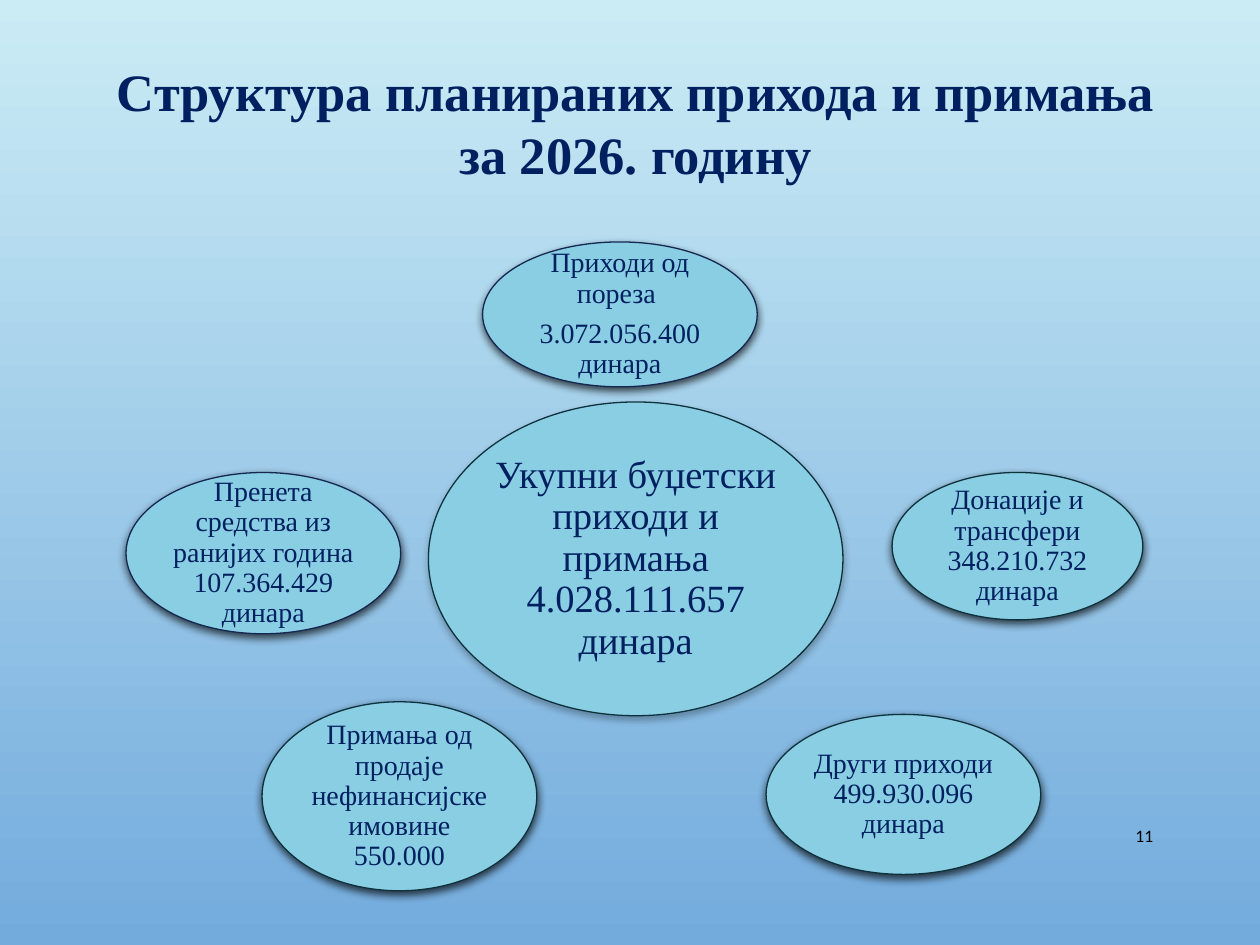
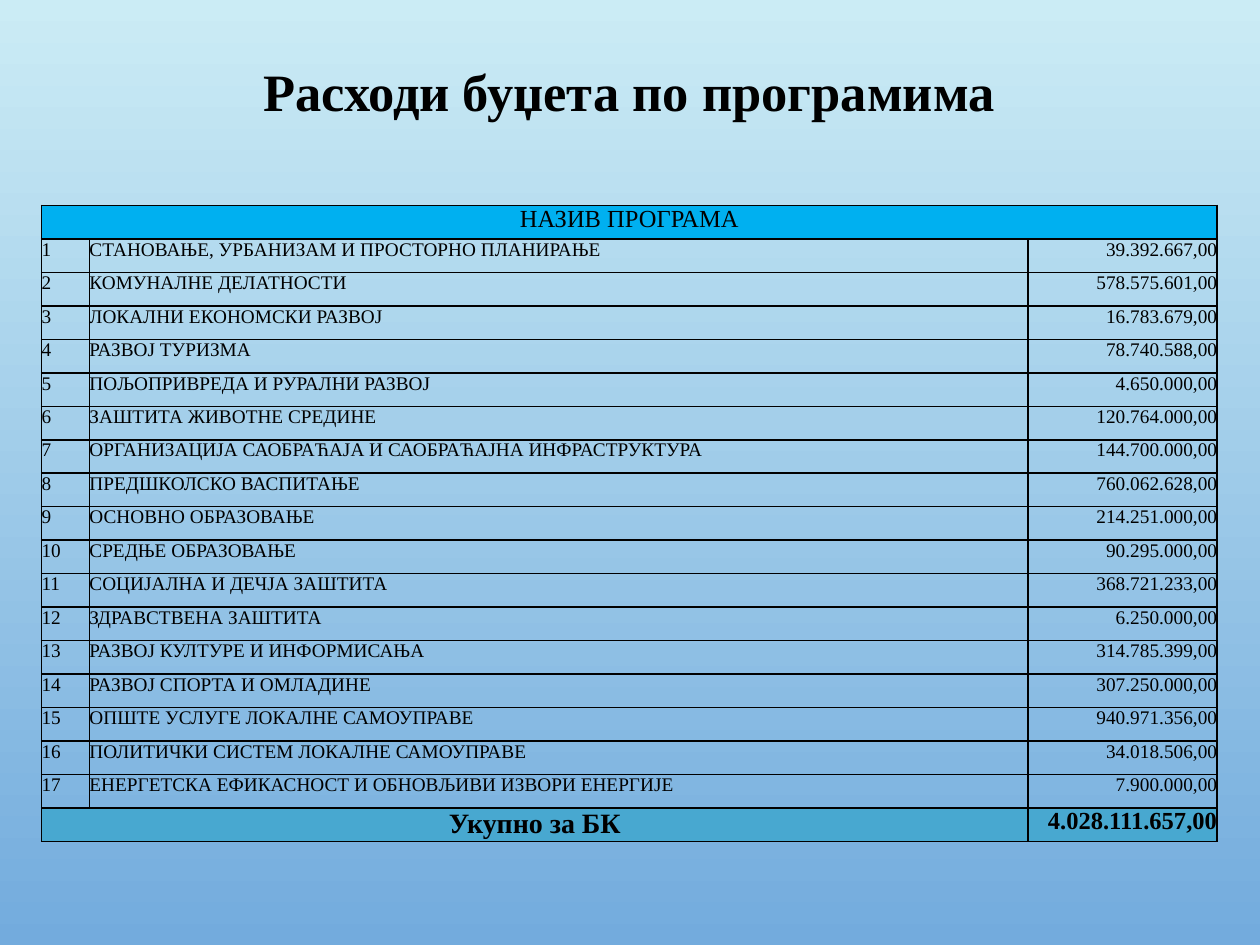
from typing import NamedTuple

from lxml import etree
from pptx import Presentation
from pptx.dml.color import RGBColor
from pptx.enum.shapes import MSO_SHAPE as SHAPE
from pptx.enum.text import MSO_ANCHOR as ANCHOR, PP_ALIGN as ALIGN
from pptx.oxml.ns import qn
from pptx.util import Emu, Pt

EMU_PER_PX = 9144  # 100 px to the inch
SERIF, SANS = "Times New Roman", "Calibri"
NAVY, BLACK = "002060", "000000"
SKY_TOP, SKY_BOTTOM = "CBECF5", "73ABDD"
BUBBLE, TEAL_LINE, BLUE_LINE = "8ACEE4", "0E323D", "142852"
HEADER_FILL, TOTAL_FILL = "00B0F0", "48A8D0"
PLAIN_TABLE_STYLE = "{2D5ABB26-0587-4C30-8999-92F81FD0307C}"


class Box(NamedTuple):
    left: int
    top: int
    width: int
    height: int


class Bubble(NamedTuple):
    box: Box
    lines: tuple[str, ...]
    line: str = TEAL_LINE
    size: int = 16
    inset: int = 2
    shadow_alpha: int = 69
    shadow_blur: int = 5


class Program(NamedTuple):
    name: str
    amount: str


BUBBLES = [
    Bubble(Box(340, 319, 329, 249), ("Укупни буџетски приходи и примања 4.028.111.657 динара",),
           size=22, inset=3, shadow_alpha=28, shadow_blur=4),
    Bubble(Box(383, 192, 218, 115), ("Приходи од пореза ", "3.072.056.400 динара"), BLUE_LINE),
    Bubble(Box(708, 375, 199, 117), ("Донације и трансфери 348.210.732 динара",)),
    Bubble(Box(608, 567, 218, 127), ("Други приходи 499.930.096 динара",)),
    Bubble(Box(208, 557, 218, 150), ("Примања од продаје нефинансијске имовине 550.000",)),
    Bubble(Box(100, 375, 218, 128),
           ("Пренета средства из ранијих година 107.364.429 динара",), BLUE_LINE),
]

PROGRAMS = [
    Program("СТАНОВАЊЕ, УРБАНИЗАМ И ПРОСТОРНО ПЛАНИРАЊЕ", "39.392.667,00"),
    Program("КОМУНАЛНЕ ДЕЛАТНОСТИ", "578.575.601,00"),
    Program("ЛОКАЛНИ ЕКОНОМСКИ РАЗВОЈ", "16.783.679,00"),
    Program("РАЗВОЈ ТУРИЗМА", "78.740.588,00"),
    Program("ПОЉОПРИВРЕДА И РУРАЛНИ РАЗВОЈ", "4.650.000,00"),
    Program("ЗАШТИТА ЖИВОТНЕ СРЕДИНЕ", "120.764.000,00"),
    Program("ОРГАНИЗАЦИЈА САОБРАЋАЈА И САОБРАЋАЈНА ИНФРАСТРУКТУРА", "144.700.000,00"),
    Program("ПРЕДШКОЛСКО ВАСПИТАЊЕ", "760.062.628,00"),
    Program("ОСНОВНО ОБРАЗОВАЊЕ", "214.251.000,00"),
    Program("СРЕДЊЕ ОБРАЗОВАЊЕ", "90.295.000,00"),
    Program("СОЦИЈАЛНА И ДЕЧЈА ЗАШТИТА", "368.721.233,00"),
    Program("ЗДРАВСТВЕНА ЗАШТИТА", "6.250.000,00"),
    Program("РАЗВОЈ КУЛТУРЕ И ИНФОРМИСАЊА", "314.785.399,00"),
    Program("РАЗВОЈ СПОРТА И ОМЛАДИНЕ", "307.250.000,00"),
    Program("ОПШТЕ УСЛУГЕ ЛОКАЛНЕ САМОУПРАВЕ", "940.971.356,00"),
    Program("ПОЛИТИЧКИ СИСТЕМ ЛОКАЛНЕ САМОУПРАВЕ", "34.018.506,00"),
    Program("ЕНЕРГЕТСКА ЕФИКАСНОСТ И ОБНОВЉИВИ ИЗВОРИ ЕНЕРГИЈЕ", "7.900.000,00"),
]
TABLE_BOX = Box(33, 108, 933, 560)
TABLE_COLS = (38, 745, 150)
SPACER_ROW = 55


def px(n: float) -> Emu:
    return Emu(round(n * EMU_PER_PX))


def place(box: Box) -> tuple[Emu, ...]:
    return tuple(px(n) for n in box)


def rgb(color: str) -> RGBColor:
    return RGBColor.from_string(color)


def add_run(p, text: str, size: int, color: str = BLACK, bold: bool = False,
            font: str = SERIF) -> None:
    r = p.add_run()
    r.text = text
    r.font.name, r.font.size, r.font.bold = font, Pt(size), bold
    r.font.color.rgb = rgb(color)


def add_slide(prs):
    """Add a blank slide with the shared sky gradient."""
    s = prs.slides.add_slide(prs.slide_layouts[6])
    fill = s.background.fill
    fill.gradient()
    fill.gradient_angle = 270
    for stop, color in zip(fill.gradient_stops, (SKY_TOP, SKY_BOTTOM)):
        stop.color.rgb = rgb(color)
    return s


def add_text(s, box: Box, text: str, size: int, color: str = BLACK, bold: bool = False,
             font: str = SERIF, align=ALIGN.CENTER, anchor=ANCHOR.TOP) -> None:
    tf = s.shapes.add_textbox(*place(box)).text_frame
    tf.word_wrap = True
    tf.vertical_anchor = anchor
    p = tf.paragraphs[0]
    p.alignment = align
    add_run(p, text, size, color, bold, font)


def add_title(s, box: Box, text: str, color: str) -> None:
    add_text(s, box, text, 30, color, bold=True)


def add_page_number(s, number: str) -> None:
    add_text(s, Box(862, 643, 63, 40), number, 10, font=SANS,
             align=ALIGN.RIGHT, anchor=ANCHOR.MIDDLE)


def add_shadow(sp, alpha: int, blur: int) -> None:
    sp.shadow.inherit = False
    effects = sp._element.spPr.find(qn("a:effectLst"))
    shadow = etree.SubElement(effects, qn("a:outerShdw"), blurRad=str(Pt(blur)),
                              dist=str(Pt(2)), dir="5400000", rotWithShape="0")
    color = etree.SubElement(shadow, qn("a:srgbClr"), val=BLACK)
    etree.SubElement(color, qn("a:alpha"), val=str(alpha * 1000))


def add_bubble(s, b: Bubble) -> None:
    sp = s.shapes.add_shape(SHAPE.OVAL, *place(b.box))
    sp.fill.solid()
    sp.fill.fore_color.rgb = rgb(BUBBLE)
    sp.line.color.rgb = rgb(b.line)
    sp.line.width = Pt(0.75)
    add_shadow(sp, b.shadow_alpha, b.shadow_blur)
    tf = sp.text_frame
    tf.word_wrap = True
    tf.vertical_anchor = ANCHOR.MIDDLE
    tf.margin_left = tf.margin_right = tf.margin_top = tf.margin_bottom = px(b.inset)
    for i, text in enumerate(b.lines):
        p = tf.add_paragraph() if i else tf.paragraphs[0]
        p.alignment = ALIGN.CENTER
        p.line_spacing = 0.9
        if i:
            p.space_before = Pt(6)
        add_run(p, text, b.size, NAVY)


def set_borders(cell, sides: str) -> None:
    """Draw 1 pt black borders on the sides named by letters from LRTB."""
    tc_pr = cell._tc.get_or_add_tcPr()
    for i, side in enumerate(sides):
        ln = etree.Element(qn(f"a:ln{side}"), w=str(Pt(1)))
        fill = etree.SubElement(ln, qn("a:solidFill"))
        etree.SubElement(fill, qn("a:srgbClr"), val=BLACK)
        tc_pr.insert(i, ln)


def fill_cell(cell, text: str, size: int = 11, align=ALIGN.LEFT, bold: bool = False,
              color: str | None = None) -> None:
    cell.margin_left = cell.margin_right = cell.margin_top = cell.margin_bottom = 0
    if color:
        cell.fill.solid()
        cell.fill.fore_color.rgb = rgb(color)
    p = cell.text_frame.paragraphs[0]
    p.alignment = align
    add_run(p, text, size, bold=bold)


def add_program_table(s) -> None:
    n_rows = len(PROGRAMS) + 3
    tbl = s.shapes.add_table(n_rows, len(TABLE_COLS), *place(TABLE_BOX)).table
    tbl.first_row = tbl.horz_banding = False
    tbl._tbl.tblPr.find(qn("a:tableStyleId")).text = PLAIN_TABLE_STYLE
    for col, width in zip(tbl.columns, TABLE_COLS):
        col.width = px(width)
    row_height = (TABLE_BOX.height - SPACER_ROW) / (n_rows - 1)
    for i, row in enumerate(tbl.rows):
        row.height = px(row_height if i else SPACER_ROW)
        for cell in row.cells:
            cell.fill.background()
            set_borders(cell, "LRTB" if i else "B")

    last = n_rows - 1
    for row, end in ((0, 2), (1, 2), (last, 1)):
        tbl.cell(row, 0).merge(tbl.cell(row, end))
    fill_cell(tbl.cell(1, 0), "НАЗИВ ПРОГРАМА", 14, ALIGN.CENTER, color=HEADER_FILL)
    for n, program in enumerate(PROGRAMS, 1):
        fill_cell(tbl.cell(n + 1, 0), str(n))
        fill_cell(tbl.cell(n + 1, 1), program.name)
        fill_cell(tbl.cell(n + 1, 2), program.amount, align=ALIGN.RIGHT)
    fill_cell(tbl.cell(last, 0), "Укупно за БК", 16, ALIGN.CENTER, True, TOTAL_FILL)
    fill_cell(tbl.cell(last, 2), "4.028.111.657,00", 14, ALIGN.RIGHT, True, TOTAL_FILL)


def build_revenue_slide(prs) -> None:
    s = add_slide(prs)
    add_page_number(s, "11")
    for bubble in BUBBLES:
        add_bubble(s, bubble)
    add_title(s, Box(67, 42, 875, 111),
              "Структура планираних прихода и примања за 2026. годину", NAVY)


def build_program_slide(prs) -> None:
    s = add_slide(prs)
    add_title(s, Box(83, 42, 833, 61), "Расходи буџета по програмима", BLACK)
    add_program_table(s)


def main() -> None:
    prs = Presentation()
    prs.slide_width, prs.slide_height = px(1000), px(750)
    build_revenue_slide(prs)
    build_program_slide(prs)
    prs.save("out.pptx")


if __name__ == "__main__":
    main()
